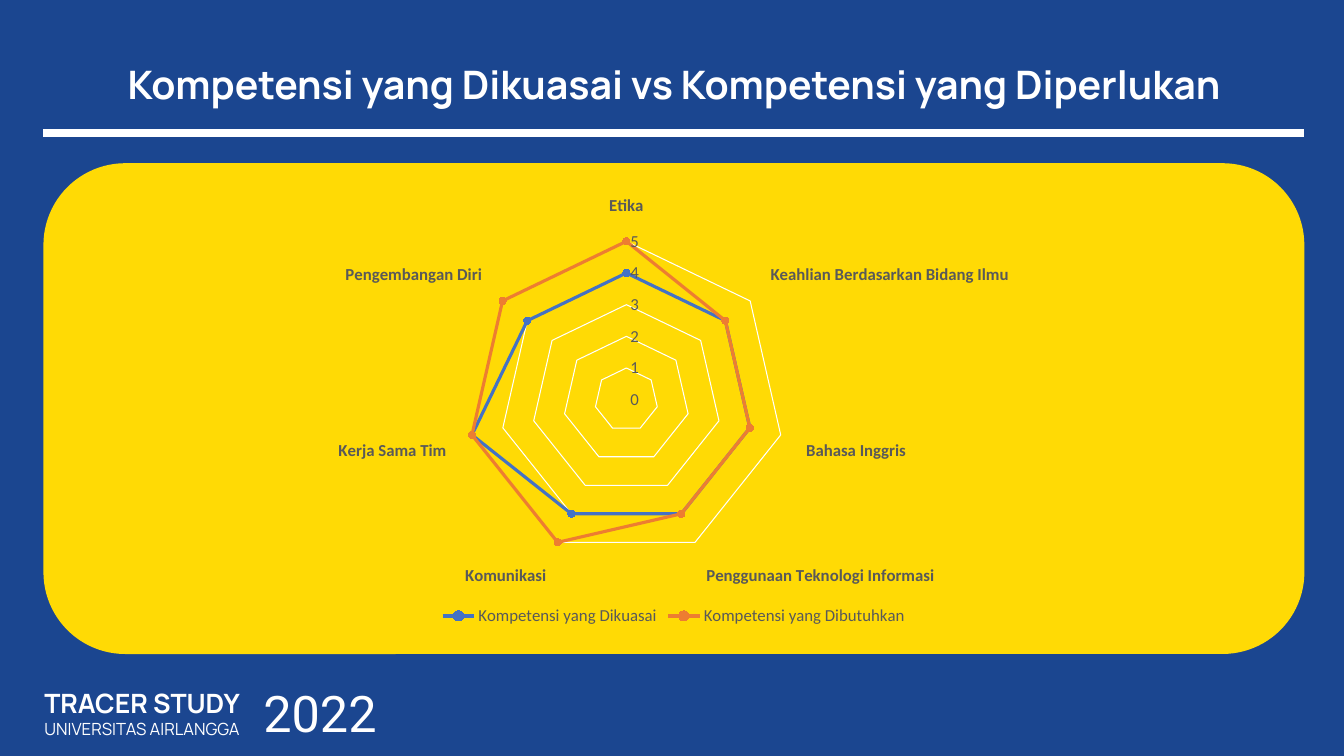
from pptx import Presentation
from pptx.chart.data import CategoryChartData
from pptx.dml.color import RGBColor
from pptx.enum.chart import (XL_CHART_TYPE, XL_LEGEND_POSITION,
                             XL_MARKER_STYLE, XL_TICK_MARK)
from pptx.enum.shapes import MSO_CONNECTOR, MSO_SHAPE
from pptx.enum.text import MSO_ANCHOR, PP_ALIGN
from pptx.oxml.ns import qn
from pptx.util import Pt

CENTER, MIDDLE = PP_ALIGN.CENTER, MSO_ANCHOR.MIDDLE
CIRCLE, NO_TICK = XL_MARKER_STYLE.CIRCLE, XL_TICK_MARK.NONE

NAVY = RGBColor(0x1B, 0x46, 0x90)
YELLOW = RGBColor(0xFF, 0xDA, 0x05)
WHITE = RGBColor(0xFF, 0xFF, 0xFF)
GREY = RGBColor(0x59, 0x59, 0x59)
LIGHT = RGBColor(0xD9, 0xD9, 0xD9)
BLUE = RGBColor(0x44, 0x72, 0xC4)
ORANGE = RGBColor(0xED, 0x7D, 0x31)

# Content
TITLE = "Kompetensi yang Dikuasai vs Kompetensi yang Diperlukan"
# box (left, top, width, height), then lines of (text, size, font, bold)
FOOTER = [
    ((22.3, 487.4, 158.4, 44.6),
     [("TRACER STUDY", 19, "Manrope", True),
      ("UNIVERSITAS AIRLANGGA", 12, "Manrope", False)]),
    ((172.1, 483.8, 113, 51.1), [("2022", 36, "Roboto", False)]),
]
COMPETENCES = ["Etika", "Keahlian Berdasarkan Bidang Ilmu", "Bahasa Inggris",
               "Penggunaan Teknologi Informasi", "Komunikasi",
               "Kerja Sama Tim", "Pengembangan Diri"]
SERIES = [
    ("Kompetensi yang Dikuasai", (4, 4, 4, 4, 4, 5, 4), BLUE),
    ("Kompetensi yang Dibutuhkan", (5, 4, 4, 4, 5, 5, 5), ORANGE),
]

# Layout, in points
SLIDE_W, SLIDE_H = 960, 540
MARGIN, RULE_Y = 31, 95
INNER_W = SLIDE_W - 2 * MARGIN + 2.7
TITLE_BOX = (MARGIN, 29.5, INNER_W, 65.5)
PANEL_BOX = (MARGIN, 116.6, INNER_W, 350.6)
CHART_BOX = (68.4, 133.2, 825.8, 316.8)


def pts(box):
    return [Pt(v) for v in box]


def style(font, color, **values):
    for name, value in values.items():
        setattr(font, name, value)
    font.color.rgb = color


prs = Presentation()
prs.slide_width, prs.slide_height = Pt(SLIDE_W), Pt(SLIDE_H)
s = prs.slides.add_slide(prs.slide_layouts[5])
s.background.fill.solid()
s.background.fill.fore_color.rgb = NAVY

# Yellow panel
panel = s.shapes.add_shape(MSO_SHAPE.ROUNDED_RECTANGLE, *pts(PANEL_BOX))
panel.shadow.inherit = False
panel.fill.solid()
panel.fill.fore_color.rgb = YELLOW
panel.line.fill.background()

# Rule under the title
rule = s.shapes.add_connector(MSO_CONNECTOR.STRAIGHT,
                              *pts((MARGIN, RULE_Y, MARGIN + INNER_W, RULE_Y)))
rule.line.color.rgb, rule.line.width = WHITE, Pt(6)
sp_pr = rule._element.spPr
sp_pr.append(sp_pr.makeelement(qn("a:effectLst"), {}))

# Title
title = s.shapes.title
title.left, title.top, title.width, title.height = pts(TITLE_BOX)
tf = title.text_frame
tf.word_wrap, tf.vertical_anchor = True, MIDDLE
p = tf.paragraphs[0]
p.alignment, p.line_spacing = CENTER, 0.9
r = p.add_run()
r.text = TITLE
style(r.font, WHITE, size=Pt(28), name="Manrope", bold=True)

# Footer
for box, lines in FOOTER:
    tf = s.shapes.add_textbox(*pts(box)).text_frame
    tf.word_wrap = False
    for i, (text, size, face, bold) in enumerate(lines):
        p = tf.add_paragraph() if i else tf.paragraphs[0]
        p.alignment = CENTER
        r = p.add_run()
        r.text = text
        style(r.font, WHITE, size=Pt(size), name=face, bold=bold)

# Radar chart
data = CategoryChartData(number_format="0")
data.categories = COMPETENCES
for name, values, _ in SERIES:
    data.add_series(name, values)
chart = s.shapes.add_chart(XL_CHART_TYPE.RADAR_MARKERS,
                           *pts(CHART_BOX), data).chart
chart.has_title = False
style(chart.font, GREY, size=Pt(12), name="Calibri")
chart.has_legend = True
chart.legend.position = XL_LEGEND_POSITION.BOTTOM
chart.legend.include_in_layout = False
style(chart.legend.font, GREY, size=Pt(12), name="Calibri")

plot = chart.plots[0]
plot.vary_by_categories = False
for ser, (_, _, color) in zip(plot.series, SERIES):
    ser.format.line.color.rgb, ser.format.line.width = color, Pt(2.25)
    ser.marker.style, ser.marker.size = CIRCLE, 5
    ser.marker.format.fill.solid()
    ser.marker.format.fill.fore_color.rgb = color
    ser.marker.format.line.color.rgb = color

# Axes
cat_axis, val_axis = chart.category_axis, chart.value_axis
for axis, bold in ((cat_axis, True), (val_axis, False)):
    axis.major_tick_mark = axis.minor_tick_mark = NO_TICK
    style(axis.tick_labels.font, GREY, size=Pt(12), name="Calibri", bold=bold)
cat_axis.has_major_gridlines = False
cat_axis.format.line.color.rgb, cat_axis.format.line.width = LIGHT, Pt(0.75)
val_axis.minimum_scale, val_axis.maximum_scale = 0, 5
val_axis.major_unit = 1
val_axis.tick_labels.number_format = "0"
val_axis.tick_labels.number_format_is_linked = False
val_axis.format.line.fill.background()
val_axis.has_major_gridlines = True
grid = val_axis.major_gridlines.format.line
grid.color.rgb, grid.width = WHITE, Pt(0.75)

prs.save("out.pptx")
